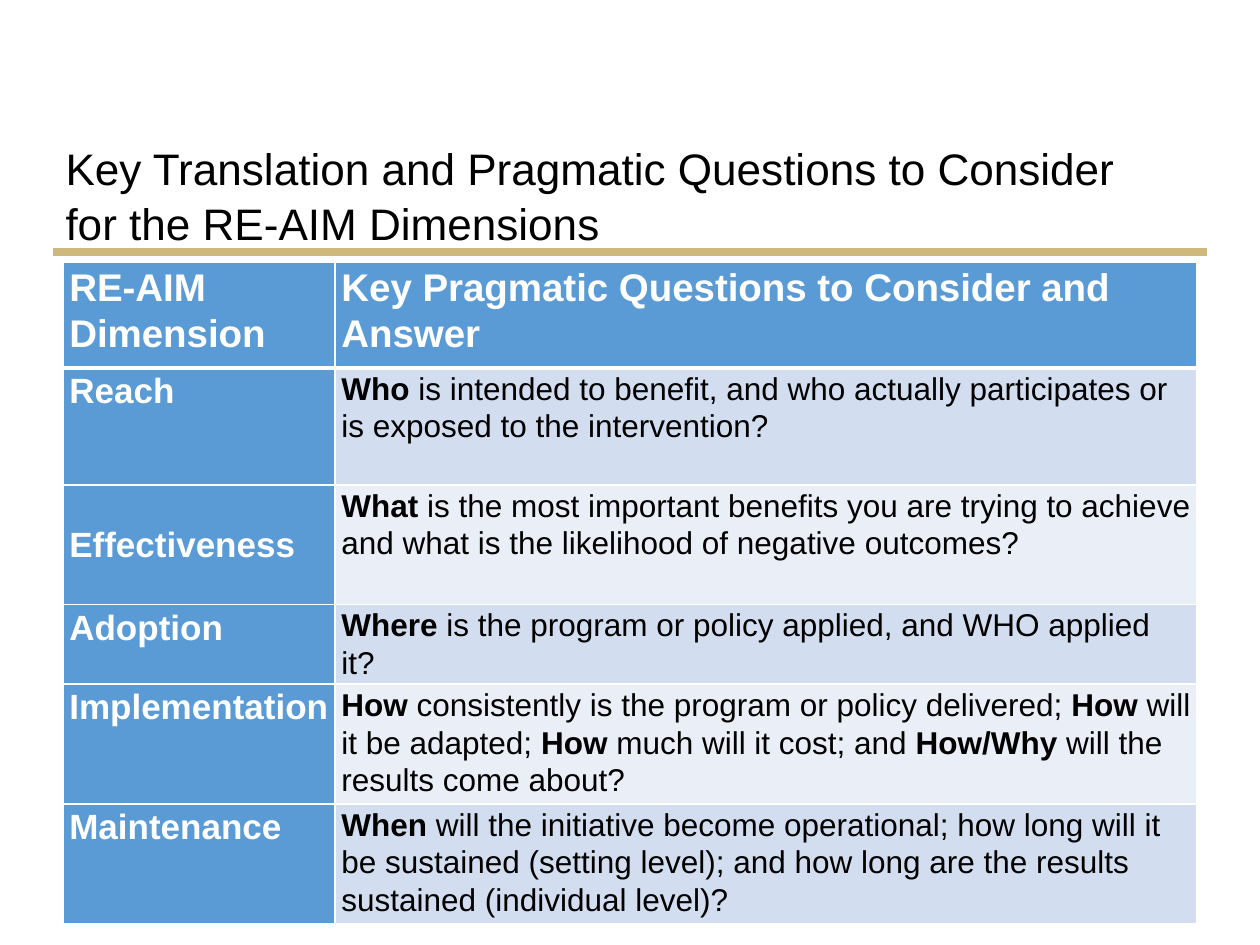
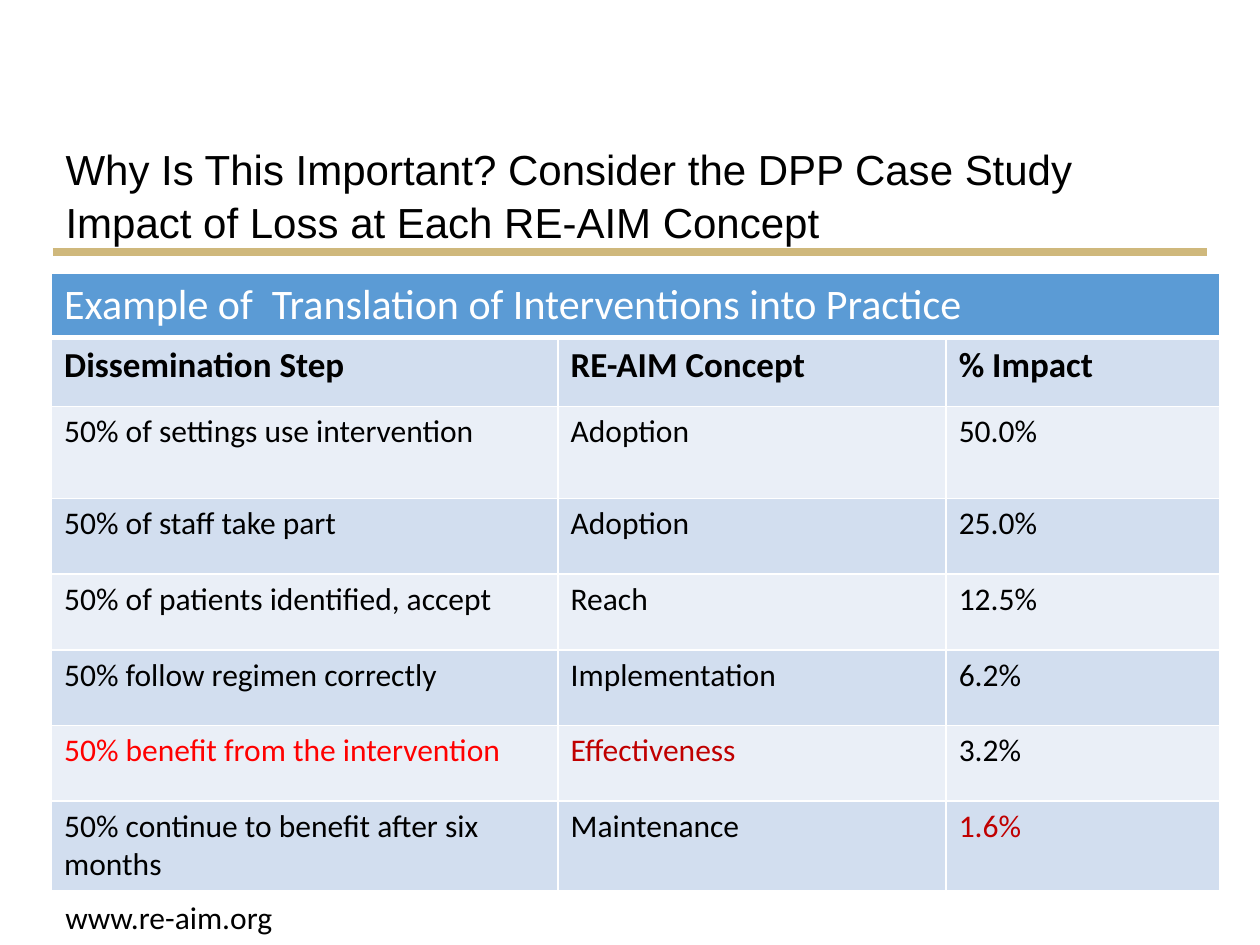
from pptx import Presentation
from pptx.dml.color import RGBColor
from pptx.enum.shapes import MSO_CONNECTOR as Connector
from pptx.enum.text import MSO_ANCHOR as Anchor, MSO_AUTO_SIZE as AutoSize, PP_ALIGN as Align
from pptx.oxml.ns import qn
from pptx.util import Inches, Pt
from lxml.etree import SubElement

BLACK = RGBColor(0x00, 0x00, 0x00)
WHITE = RGBColor(0xFF, 0xFF, 0xFF)
GOLD = RGBColor(0xCF, 0xB8, 0x7C)
BLUE = RGBColor(0x5B, 0x9B, 0xD5)
BANDS = RGBColor(0xD2, 0xDE, 0xEF), RGBColor(0xEA, 0xEF, 0xF7)
RED = RGBColor(0xFF, 0x00, 0x00)
DARK_RED = RGBColor(0xC0, 0x00, 0x00)

WIDTH, HEIGHT = 10, 7.5
MARGIN = 0.42
RULE_Y = 2
TITLE_HEIGHT = 0.92

QUESTIONS_TITLE = "Key Translation and Pragmatic Questions to Consider \vfor the RE-AIM Dimensions"
QUESTION_HEADS = ["RE-AIM Dimension", "Key Pragmatic Questions to Consider and Answer"]
QUESTIONS = [
    ("Reach", "*Who* is intended to benefit, and who actually participates or is exposed "
     "to the intervention?"),
    ("Effectiveness", "*What* is the most important benefits you are trying to achieve "
     "and what is the likelihood of negative outcomes?"),
    ("Adoption", "*Where* is the program or policy applied, and WHO applied it?"),
    ("Implementation", "*How *consistently is the program or policy delivered; *How* will "
     "it be adapted; *How* much will it cost; and *How/Why* will the results come about?"),
    ("Maintenance", "*When *will the initiative become operational; how long will it be "
     "sustained (setting level); and how long are the results sustained (individual level)?"),
]
QUESTION_COLUMNS = [2.16, 6.84]
QUESTION_ROWS = [0.84, 0.93, 0.95, 0.63, 0.95, 0.95]
DOUBLE_SPACED = "Effectiveness"

IMPACT_TITLE = ("Why Is This Important? Consider the DPP Case Study\v"
                "Impact of Loss at Each RE-AIM Concept")
IMPACT_BANNER = "Example of  Translation of Interventions into Practice"
IMPACT_HEADS = ("Dissemination Step", "RE-AIM Concept", "% Impact")
IMPACTS = [
    ("50% of settings use intervention", "Adoption", "50.0%"),
    ("50% of staff take part", "Adoption", "25.0%"),
    ("50% of patients identified, accept", "Reach", "12.5%"),
    ("50% follow regimen correctly", "Implementation", "6.2%"),
    ("50% benefit from the intervention", "Effectiveness", "3.2%"),
    ("50% continue to benefit after six months", "Maintenance", "1.6%"),
]
HIGHLIGHTS = {
    "50% benefit from the intervention": RED,
    "Effectiveness": DARK_RED,
    "1.6%": DARK_RED,
}
IMPACT_COLUMNS = [4.02, 3.08, 2.17]
IMPACT_ROWS = [0.48, 0.55, 0.73] + [0.6] * 5
SOURCE = "www.re-aim.org"


def style(paragraph, size, name, color, bold=None):
    font = paragraph.font
    font.size, font.name, font.bold = Pt(size), name, bold
    font.color.rgb = color


def add_page(deck, title_text, size):
    page = deck.slides.add_slide(deck.slide_layouts[5])
    rule = page.shapes.add_connector(Connector.STRAIGHT, Inches(MARGIN), Inches(RULE_Y),
                                     Inches(WIDTH - MARGIN), Inches(RULE_Y))
    rule.line.color.rgb = GOLD
    rule.line.width = Pt(4.5)
    SubElement(rule._element.spPr, qn("a:effectLst"))
    title = page.shapes.title
    title.left, title.top = Inches(MARGIN), Inches(RULE_Y - TITLE_HEIGHT)
    title.width, title.height = Inches(9), Inches(TITLE_HEIGHT)
    frame = title.text_frame
    frame.text = title_text
    frame.word_wrap = True
    frame.auto_size = AutoSize.NONE
    frame.vertical_anchor = Anchor.MIDDLE
    paragraph = frame.paragraphs[0]
    paragraph.alignment = Align.LEFT
    paragraph.line_spacing = 1.05
    style(paragraph, size, "Arial", BLACK)
    return page


def add_grid(page, left, top, columns, rows):
    frame = page.shapes.add_table(len(rows), len(columns), Inches(left), Inches(top),
                                  Inches(sum(columns)), Inches(sum(rows)))
    table = frame.table
    for column, width in zip(table.columns, columns):
        column.width = Inches(width)
    for row, height in zip(table.rows, rows):
        row.height = Inches(height)
    return table


def border(cell, heavy_edge):
    properties = cell._tc.get_or_add_tcPr()
    for position, edge in enumerate(("lnL", "lnR", "lnT", "lnB")):
        weight = 3 if edge == heavy_edge else 1
        line = properties.makeelement(qn(f"a:{edge}"), {"w": str(Pt(weight))})
        fill = SubElement(line, qn("a:solidFill"))
        SubElement(fill, qn("a:srgbClr"), val=str(WHITE))
        properties.insert(position, line)


def paint(cell, row, fill):
    cell.fill.solid()
    cell.fill.fore_color.rgb = fill
    border(cell, {0: "lnB", 1: "lnT"}.get(row))


def build_questions(deck):
    page = add_page(deck, QUESTIONS_TITLE, 25.2)
    table = add_grid(page, 0.5, 2.08, QUESTION_COLUMNS, QUESTION_ROWS)
    for row, texts in enumerate([QUESTION_HEADS] + QUESTIONS):
        for column, text in enumerate(texts):
            cell = table.cell(row, column)
            label = row == 0 or column == 0
            paint(cell, row, BLUE if label else BANDS[(row - 1) % 2])
            cell.margin_left = cell.margin_right = Inches(0.05)
            cell.margin_top, cell.margin_bottom = Inches(0.01), 0
            paragraph = cell.text_frame.paragraphs[0]
            paragraph.line_spacing = 2 if text == DOUBLE_SPACED else 1.07
            size = 22 if row == 0 else 20 if label else 18
            style(paragraph, size, "Arial", WHITE if label else BLACK)
            for index, part in enumerate(text.split("*")):
                if part:
                    span = paragraph.add_run()
                    span.text = part
                    span.font.bold = label or index % 2 == 1
            if row and (column == 0 or row > 2):
                paragraph.space_after = Pt(12)


def build_impact(deck):
    page = add_page(deck, IMPACT_TITLE, 24)
    table = add_grid(page, 0.41, 2.17, IMPACT_COLUMNS, IMPACT_ROWS)
    table.cell(0, 0).merge(table.cell(0, 2))
    for row, texts in enumerate([(IMPACT_BANNER, "", ""), IMPACT_HEADS] + IMPACTS):
        size = {0: 24, 1: 20}.get(row, 18)
        for column, text in enumerate(texts):
            cell = table.cell(row, column)
            paint(cell, row, BANDS[(row - 1) % 2] if row else BLUE)
            if text:
                cell.text = text
                color = HIGHLIGHTS.get(text, BLACK) if row else WHITE
                paragraph = cell.text_frame.paragraphs[0]
                style(paragraph, size, "Calibri", color)
                paragraph.runs[0].font.bold = row == 1
    box = page.shapes.add_textbox(Inches(MARGIN), Inches(7.08), Inches(2.66), Inches(0.4))
    box.text_frame.word_wrap = True
    box.text_frame.text = SOURCE
    style(box.text_frame.paragraphs[0], 18, "Calibri", BLACK)


def main():
    deck = Presentation()
    deck.slide_width, deck.slide_height = Inches(WIDTH), Inches(HEIGHT)
    build_questions(deck)
    build_impact(deck)
    deck.save("out.pptx")


if __name__ == "__main__":
    main()
